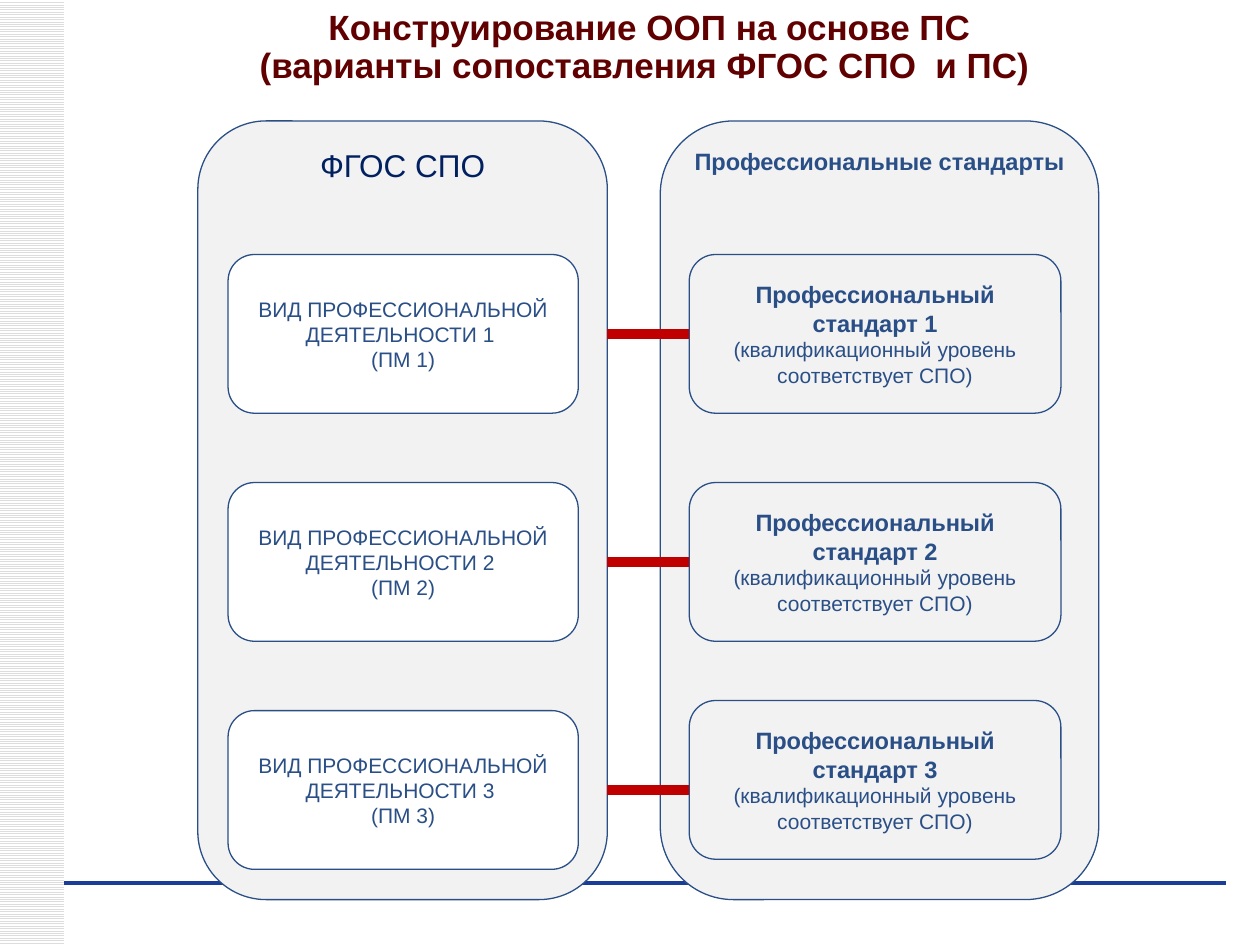
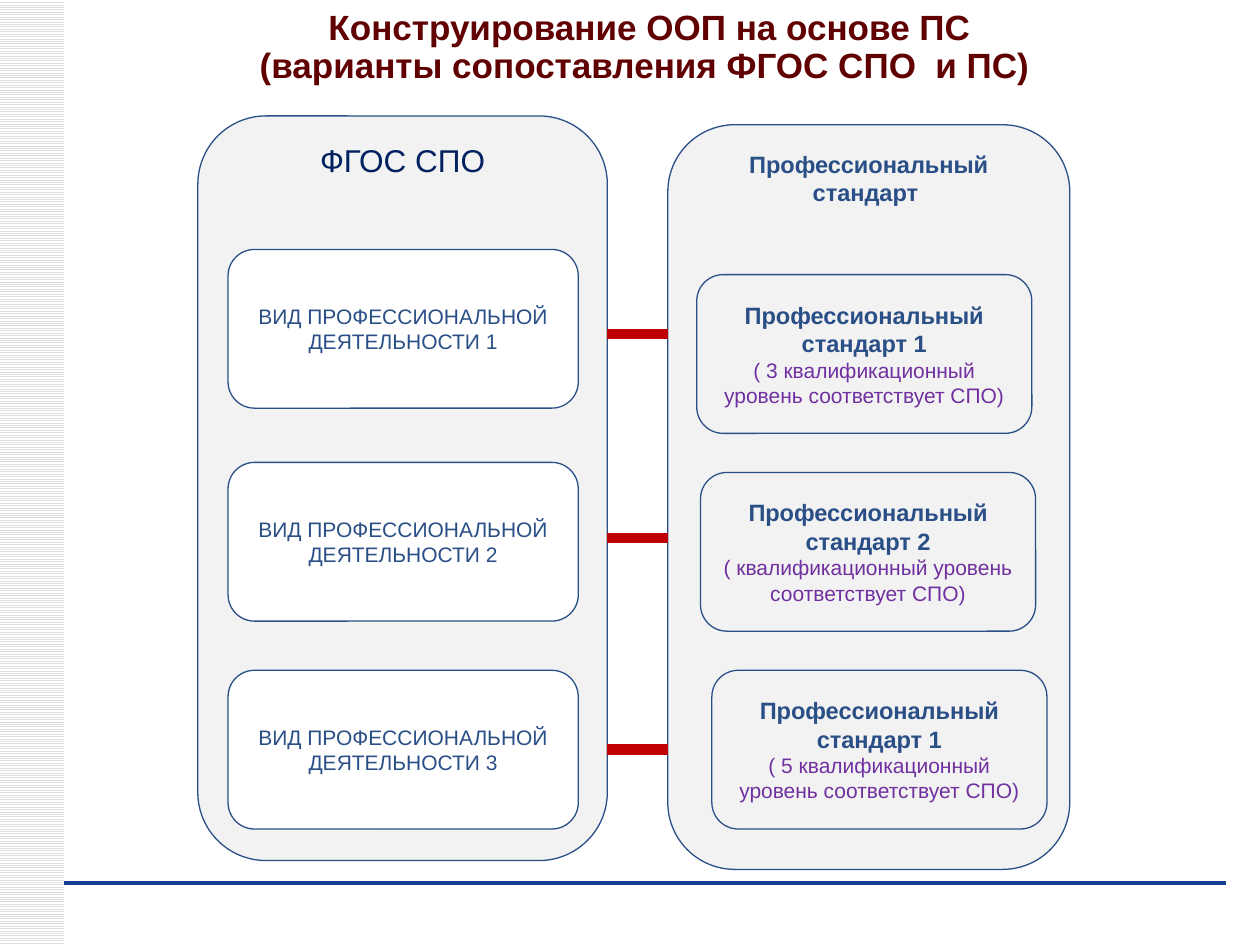
"""Build two slides matching educational standards with professional standards."""
from lxml import etree
from pptx import Presentation, util as u
from pptx.enum import dml, shapes, text
from pptx.dml.color import RGBColor
from pptx.oxml import ns

COLORS = {
    "paper": "FFFFFF", "stripe": "DDDDDD", "rule": "1A3D97", "panel": "F2F2F2",
    "blue": "2A4F86", "navy": "002060", "maroon": "600000", "purple": "7030A0",
    "beam": "C00000",
}
FORMATS = {
    "title": ("maroon", {"size": u.Pt(20), "bold": True}),
    "program": ("navy", {"size": u.Pt(18), "bold": False}),
    "standard": ("blue", {"size": u.Pt(13.5), "bold": True}),
    "activity": ("blue", {"size": u.Pt(12), "bold": False}),
    "level": ("purple", {"size": u.Pt(12), "bold": False}),
}
INSETS = {
    "margin_left": u.Inches(0.08), "margin_right": u.Inches(0.08),
    "margin_top": u.Inches(0.04), "margin_bottom": u.Inches(0.04),
    "word_wrap": True,
}
TITLE = ["Конструирование ООП на основе ПС",
         "(варианты сопоставления ФГОС СПО  и ПС) "]
CARD_HEIGHT = 1.26
PROGRAM_LEFT, PROGRAM_WIDTH = 1.57, 3.25
PROGRAM_RIGHT = PROGRAM_LEFT + PROGRAM_WIDTH
ACTIVITY_LEFT, ACTIVITY_WIDTH = 1.81, 2.78


def rgb(name):
    return RGBColor.from_string(COLORS[name])


def assign(target, values):
    for name, value in values.items():
        setattr(target, name, value)


class Deck:
    """Holds the shared style and the current slide."""

    def __init__(self):
        self.prs = Presentation()
        assign(self.prs, {"slide_width": u.Inches(10), "slide_height": u.Inches(7.5)})
        self.slide = None

    def start_slide(self):
        first = self.slide is None
        self.slide = self.prs.slides.add_slide(self.prs.slide_layouts[5])
        if first:
            self.decorate_master()
        title = self.slide.shapes.title
        places = {"left": 0.51, "top": 0.05, "width": 9.29, "height": 0.67}
        assign(title, {side: u.Inches(value) for side, value in places.items()})
        assign(title.text_frame, {"auto_size": text.MSO_AUTO_SIZE.NONE,
                                  "vertical_anchor": text.MSO_ANCHOR.MIDDLE})
        self.add_lines(title.text_frame, [(line, "title") for line in TITLE], 0.9)

    def decorate_master(self):
        band = self.slide.shapes.add_shape(
            shapes.MSO_SHAPE.RECTANGLE, 0, 0, u.Inches(0.51), u.Inches(7.5))
        band.shadow.inherit = False
        band.line.fill.background()
        band.fill.patterned()
        band.fill.pattern = dml.MSO_PATTERN.LIGHT_HORIZONTAL
        band.fill.fore_color.rgb = rgb("stripe")
        band.fill.back_color.rgb = rgb("paper")
        rule = self.line(0.51, 9.73, 7.01, "rule", 0)
        master_tree = self.prs.slide_master.shapes.element
        for number, part in enumerate((band, rule), 20):
            part.element.xpath("./*/p:cNvPr")[0].set("id", str(number))
            master_tree.append(part.element)

    def add_lines(self, frame, lines, spacing=None):
        for index, (words, style) in enumerate(lines):
            paragraph = frame.paragraphs[0] if index == 0 else frame.add_paragraph()
            assign(paragraph, {"alignment": text.PP_ALIGN.CENTER,
                               "line_spacing": spacing})
            run = paragraph.add_run()
            run.text = words
            color, values = FORMATS[style]
            assign(run.font, {"name": "Arial", **values})
            run.font.color.rgb = rgb(color)

    def rounded(self, place, fill, lines, anchor):
        box = self.slide.shapes.add_shape(
            shapes.MSO_SHAPE.ROUNDED_RECTANGLE, *map(u.Inches, place))
        box.shadow.inherit = False
        box.fill.solid()
        box.fill.fore_color.rgb = rgb(fill)
        box.line.color.rgb = rgb("blue")
        box.line.width = u.Pt(0.75)
        assign(box.text_frame, {**INSETS, "vertical_anchor": anchor})
        self.add_lines(box.text_frame, lines)
        return box

    def panel(self, place, heading, style):
        return self.rounded(place, "panel", [(heading, style)], text.MSO_ANCHOR.TOP)

    def card(self, left, top, width, fill, lines):
        return self.rounded((left, top, width, CARD_HEIGHT), fill, lines,
                            text.MSO_ANCHOR.MIDDLE)

    def line(self, start, end, y, color, points):
        connector = self.slide.shapes.add_connector(
            shapes.MSO_CONNECTOR.STRAIGHT,
            u.Inches(start), u.Inches(y), u.Inches(end), u.Inches(y))
        connector.line.color.rgb = rgb(color)
        connector.line.width = u.Pt(points)
        etree.SubElement(connector.element.spPr, ns.qn("a:effectLst"))
        return connector

    def beam(self, end, y):
        return self.line(PROGRAM_RIGHT, end, y, "beam", 6)

    def program_panel(self, top, height):
        self.panel((PROGRAM_LEFT, top, PROGRAM_WIDTH, height), "ФГОС СПО", "program")

    def activity(self, top, lines):
        self.card(ACTIVITY_LEFT, top, ACTIVITY_WIDTH, "paper",
                  [(line, "activity") for line in lines])

    def standard(self, left, top, width, number, level, style):
        return self.card(left, top, width, "panel", [
            (f"Профессиональный стандарт {number}", "standard"), (level, style)])


def separate_standards(deck):
    deck.start_slide()
    deck.panel((5.24, 0.96, 3.48, 6.18), "Профессиональные стандарты ", "standard")
    deck.program_panel(0.96, 6.18)
    for number, standard_top in enumerate((2.02, 3.83, 5.56), 1):
        activity_top = 2.02 + 1.81 * (number - 1)
        deck.activity(activity_top, [f"ВИД ПРОФЕССИОНАЛЬНОЙ ДЕЯТЕЛЬНОСТИ {number} ",
                                     f"(ПМ {number})"])
        standard = deck.standard(5.47, standard_top, 2.95, number,
                                 "(квалификационный уровень соответствует СПО)",
                                 "activity")
        beam = deck.beam(5.47, activity_top + CARD_HEIGHT / 2)
        if abs(standard_top - activity_top) < 0.01:
            beam.end_connect(standard, 1)


def standard_levels(deck):
    deck.start_slide()
    deck.program_panel(0.92, 5.91)
    deck.panel((5.3, 0.99, 3.19, 5.91), "Профессиональный стандарт ", "standard")
    rows = [
        (1.98, 2.65, 5.53, 2.18, 1, "( 3 квалификационный"),
        (3.67, 4.27, 5.56, 3.75, 2, "( квалификационный"),
        (5.32, 5.95, 5.65, 5.32, 1, "( 5 квалификационный"),
    ]
    for number, row in enumerate(rows, 1):
        activity_top, beam_y, left, top, standard_number, level = row
        deck.activity(activity_top, [f"ВИД ПРОФЕССИОНАЛЬНОЙ ДЕЯТЕЛЬНОСТИ {number}"])
        deck.standard(left, top, 2.66, standard_number,
                      f"{level} уровень соответствует СПО)", "level")
        deck.beam(5.3, beam_y)


def main():
    deck = Deck()
    separate_standards(deck)
    standard_levels(deck)
    deck.prs.save("out.pptx")


if __name__ == "__main__":
    main()
